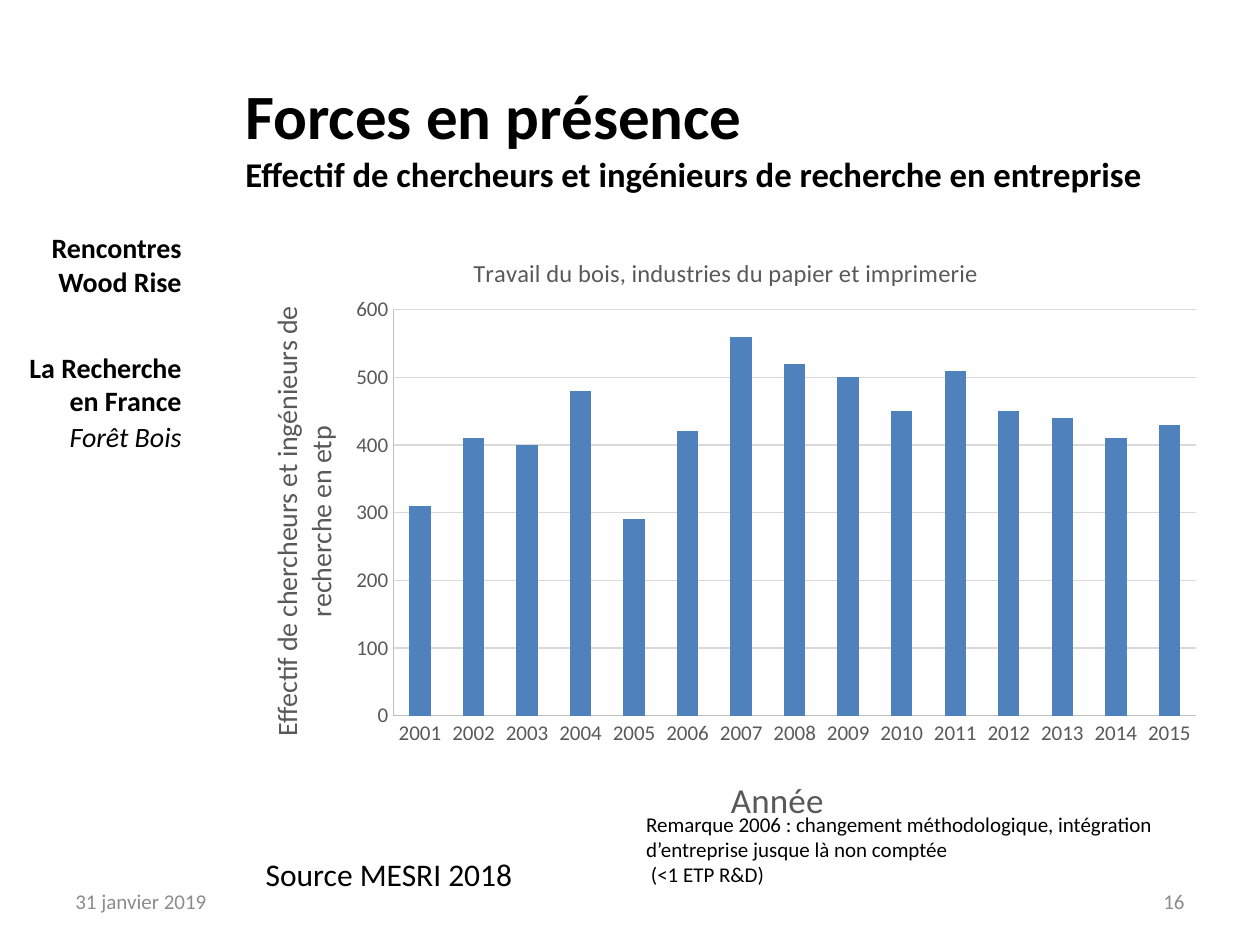
from lxml import etree
from pptx import Presentation
from pptx.chart.data import CategoryChartData
from pptx.dml.color import RGBColor
from pptx.enum.chart import XL_CHART_TYPE, XL_TICK_MARK
from pptx.enum.text import MSO_ANCHOR, PP_ALIGN
from pptx.oxml.ns import qn
from pptx.util import Inches, Pt

COLUMNS = XL_CHART_TYPE.COLUMN_CLUSTERED
NO_TICK = XL_TICK_MARK.NONE
TOP, MIDDLE = MSO_ANCHOR.TOP, MSO_ANCHOR.MIDDLE
LEFT, RIGHT = PP_ALIGN.LEFT, PP_ALIGN.RIGHT

FONT = "Calibri"
COLORS = {"text": "000000", "muted": "8C8C8C", "chart_text": "595959",
          "axis": "BFBFBF", "grid": "D9D9D9", "bar": "4F81BD"}

SECTOR = "Travail du bois, industries du papier et imprimerie"
YEARS = [str(year) for year in range(2001, 2016)]
RESEARCHERS = [310, 410, 400, 480, 290, 420, 560, 520,
               500, 450, 510, 450, 440, 410, 430]


def rgb(name):
    return RGBColor.from_string(COLORS[name])


def style_font(font, size, color="text", bold=False, italic=False):
    font.name, font.size = FONT, Pt(size)
    font.bold, font.italic = bold, italic
    font.color.rgb = rgb(color)


def add_text(slide, box, text, size, color="text", align=LEFT, anchor=TOP,
             wrap=True, bold=False, italic=False):
    frame = slide.shapes.add_textbox(*map(Inches, box)).text_frame
    frame.word_wrap, frame.vertical_anchor = wrap, anchor
    frame.text = text
    for paragraph in frame.paragraphs:
        paragraph.alignment = align
        for run in paragraph.runs:
            style_font(run.font, size, color, bold, italic)
    return frame


def set_layout(part, inner=False, **fractions):
    """Place a chart title or plot area by fractions of the chart."""
    layout = part.find(qn("c:layout"))
    if layout is None:
        layout = etree.Element(qn("c:layout"))
        text = part.find(qn("c:tx"))
        part.insert(0 if text is None else 1, layout)
    for child in list(layout):
        layout.remove(child)
    manual = etree.SubElement(layout, qn("c:manualLayout"))
    if inner:
        etree.SubElement(manual, qn("c:layoutTarget")).set("val", "inner")
    for key in ("x", "y"):
        etree.SubElement(manual, qn(f"c:{key}Mode")).set("val", "edge")
    for key, value in fractions.items():
        etree.SubElement(manual, qn(f"c:{key}")).set("val", str(value))


def set_title(owner, text, size, x, y):
    title = owner.chart_title if hasattr(owner, "chart_title") else owner.axis_title
    title.text_frame.text = text
    style_font(title.text_frame.paragraphs[0].runs[0].font, size, "chart_text")
    set_layout(title._element, x=x, y=y)


def style_axis(axis):
    axis.major_tick_mark = axis.minor_tick_mark = NO_TICK
    style_font(axis.tick_labels.font, 12, "chart_text")
    axis.format.line.color.rgb = rgb("axis")
    axis.format.line.width = Pt(0.75)


def add_heading(slide, box):
    frame = add_text(slide, box,
                     "Forces en présence\v"
                     "Effectif de chercheurs et ingénieurs de recherche en entreprise",
                     36, anchor=MIDDLE, bold=True)
    frame.paragraphs[0].runs[1].font.size = Pt(19.8)


def add_sidebar(slide, box):
    left, top, width, _ = box
    entries = [("Rencontres Wood Rise", 0, 0.79, False),
               ("La Recherche en France", 0.95, 0.39, False),
               ("Forêt Bois", 1.5, 0.47, True)]
    for text, offset, height, italic in entries:
        add_text(slide, (left, top + offset, width, height), text, 16,
                 align=RIGHT, bold=not italic, italic=italic)


def add_researcher_chart(slide, box):
    data = CategoryChartData()
    data.categories = YEARS
    data.add_series(SECTOR, RESEARCHERS)
    chart = slide.shapes.add_chart(COLUMNS, *map(Inches, box), data).chart
    style_font(chart.font, 10)
    chart.has_legend = False

    # Columns
    plot = chart.plots[0]
    plot.gap_width = 150
    plot.vary_by_categories = False
    bars = plot.series[0].format.fill
    bars.solid()
    bars.fore_color.rgb = rgb("bar")

    # Axes
    years, headcount = chart.category_axis, chart.value_axis
    style_axis(years)
    style_axis(headcount)
    headcount.minimum_scale, headcount.maximum_scale = 0, 600
    headcount.major_unit = 100
    gridlines = headcount.major_gridlines.format.line
    gridlines.color.rgb = rgb("grid")
    gridlines.width = Pt(0.75)

    # Titles and plot position
    set_title(chart, SECTOR, 14, 0.24, 0.05)
    set_title(years, "Année", 20, 0.5, 0.88)
    set_title(headcount, "Effectif de chercheurs et ingénieurs de recherche en etp",
              16, 0.03, 0.13)
    plot_area = chart._chartSpace.find(".//" + qn("c:plotArea"))
    set_layout(plot_area, inner=True, x=0.163, y=0.143, w=0.817, h=0.651)


def add_notes_on_data(slide, box):
    left, top, _, _ = box
    add_text(slide, (left + 3.02, top, 4.61, 0.71),
             "Remarque 2006 : changement méthodologique, intégration "
             "d’entreprise jusque là non comptée\n (<1 ETP R&D)", 12)
    add_text(slide, (left, top + 0.35, 2.18, 0.4), "Source MESRI 2018", 18,
             wrap=False)


def add_footer(slide, box):
    left, top, width, height = box
    column = 2.33
    add_text(slide, (left, top, column, height), "31 janvier 2019", 12,
             "muted", anchor=MIDDLE)
    add_text(slide, (left + width - column, top, column, height), "16", 12,
             "muted", align=RIGHT, anchor=MIDDLE)


def main():
    deck = Presentation()
    deck.slide_width, deck.slide_height = Inches(10), Inches(7.5)
    slide = deck.slides.add_slide(deck.slide_layouts[6])
    add_heading(slide, (1.85, 0.6, 7.8, 0.95))
    add_researcher_chart(slide, (1.85, 1.75, 7.8, 4.95))
    add_footer(slide, (0.5, 6.95, 9, 0.4))
    add_sidebar(slide, (0.04, 1.78, 1.5, 1.97))
    add_notes_on_data(slide, (2.01, 6.39, 7.63, 0.75))
    deck.save("out.pptx")


if __name__ == "__main__":
    main()
